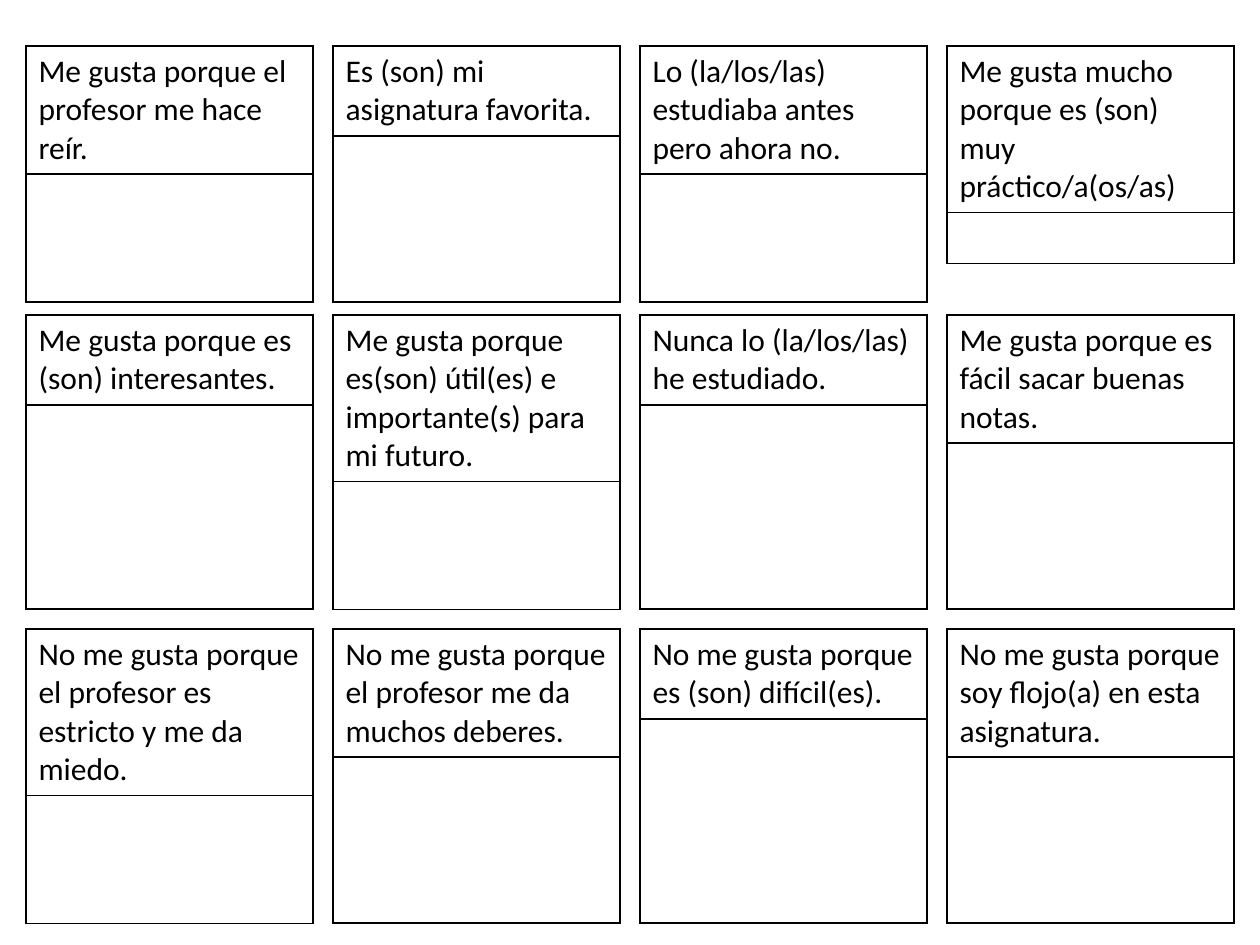
from lxml.etree import SubElement
from pptx import Presentation
from pptx.dml.color import RGBColor
from pptx.oxml.ns import qn
from pptx.util import Pt

PX = 914400 // 126
INK = "000000"


def paint(fill, color):
    fill.solid()
    fill.fore_color.rgb = RGBColor.from_string(color)


def edge(cell, color):
    props = cell._tc.get_or_add_tcPr()
    for side in ("lnL", "lnR", "lnT", "lnB"):
        line = SubElement(props, qn(f"a:{side}"), w=str(Pt(1)))
        fill = SubElement(line, qn("a:solidFill"))
        SubElement(fill, qn("a:srgbClr"), val=color)


deck = Presentation()
deck.slide_width = 1260 * PX
deck.slide_height = 945 * PX
slide = deck.slides.add_slide(deck.slide_layouts[6])

bands = [
    (46, [
        ("Me gusta porque el profesor me hace reír.", 3, 256),
        ("Es (son) mi asignatura favorita.", 2, 256),
        ("Lo (la/los/las) estudiaba antes pero ahora no.", 3, 256),
        ("Me gusta mucho porque es (son) muy práctico/a(os/as)", 3, 176),
    ]),
    (315, [
        ("Me gusta porque es (son) interesantes.", 2, 294),
        ("Me gusta porque es(son) útil(es) e importante(s) para mi futuro.", 4, 294),
        ("Nunca lo (la/los/las) he estudiado.", 2, 294),
        ("Me gusta porque es fácil sacar buenas notas.", 3, 294),
    ]),
    (629, [
        ("No me gusta porque el profesor es estricto y me da miedo.", 4, 294),
        ("No me gusta porque el profesor me da muchos deberes.", 3, 294),
        ("No me gusta porque es (son) difícil(es).", 2, 294),
        ("No me gusta porque soy flojo(a) en esta asignatura.", 3, 294),
    ]),
]

for top, cards in bands:
    for col, (text, lines, high) in enumerate(cards):
        left = 26 + 307 * col
        head = 14 + 38 * lines
        frame = slide.shapes.add_table(2, 1, left * PX, top * PX, 287 * PX, high * PX)
        table = frame.table
        table.first_row = False
        table.horz_banding = False
        table.rows[0].height = head * PX
        table.rows[1].height = (high - head) * PX
        for cell in table.iter_cells():
            edge(cell, INK)
            cell.fill.background()
        run = table.cell(0, 0).text_frame.paragraphs[0].add_run()
        run.text = text
        run.font.name = "Calibri"
        run.font.size = Pt(18)
        paint(run.font.fill, INK)

deck.save("out.pptx")
